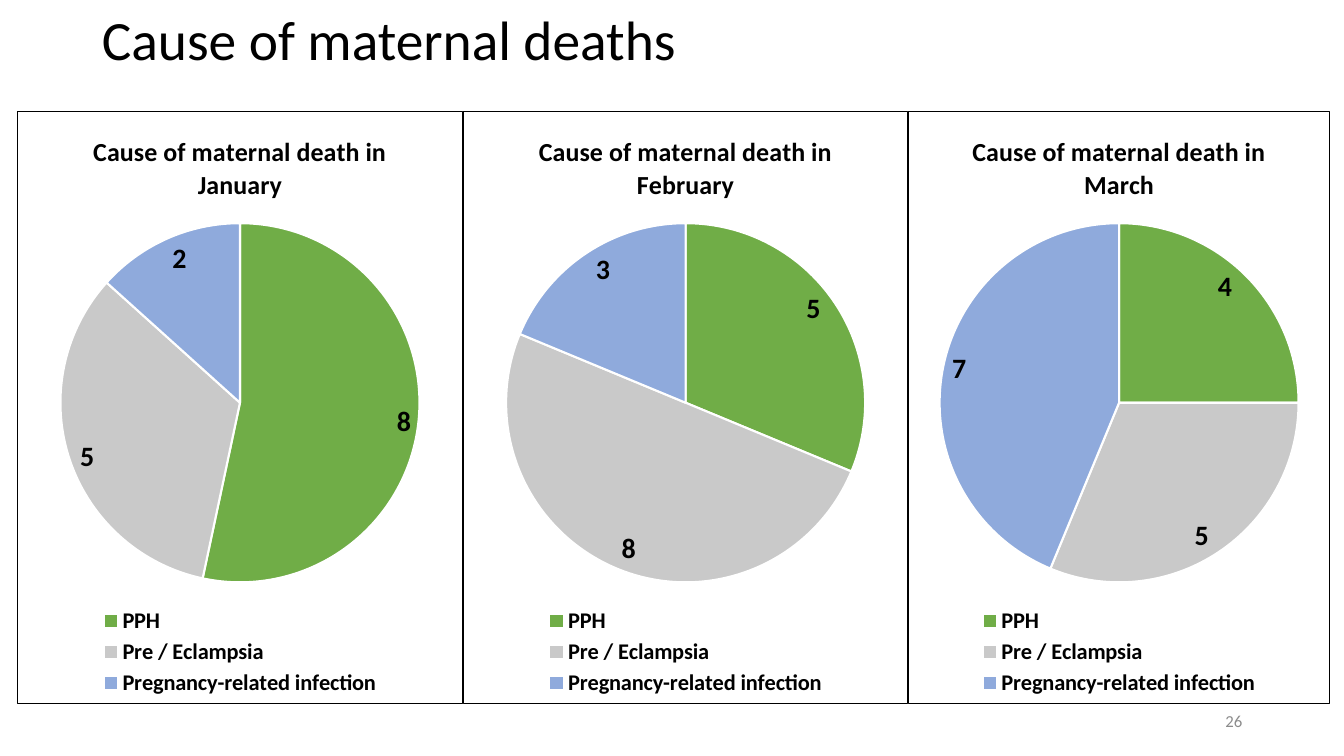
"""Builds a slide with three pie charts of the causes of maternal death by month."""
import pptx
import pptx.chart.data
import pptx.dml.color
import pptx.enum.chart
import pptx.enum.text
import pptx.oxml
import pptx.util

Inches, Pt = pptx.util.Inches, pptx.util.Pt
RGB = pptx.dml.color.RGBColor.from_string
COLORS = {"text": "000000", "number": "8C8C8C", "white": "FFFFFF",
          "PPH": "70AD47", "Pre / Eclampsia": "C9C9C9",
          "Pregnancy-related infection": "8FAADC"}
CAUSES = ["PPH", "Pre / Eclampsia", "Pregnancy-related infection"]
MONTHS = [("January", 0.17, 4.42, (8, 5, 2)),
          ("February", 4.59, 4.42, (5, 8, 3)),
          ("March", 9.01, 4.18, (4, 5, 7))]
TOP, HEIGHT = 1.1, 5.88
PIE, PIE_TOP = 3.57, 1.11
LEGEND_WIDTH, LEGEND_TOP, LEGEND_HEIGHT = 2.85, 4.9, 0.95
NS = 'xmlns:c="http://schemas.openxmlformats.org/drawingml/2006/chart"'
NS_A = 'xmlns:a="http://schemas.openxmlformats.org/drawingml/2006/main"'


def style(font, size, color="text", bold=None):
    font.name, font.size, font.bold = "Calibri", Pt(size), bold
    font.color.rgb = RGB(COLORS[color])


def layout_xml(chart_width, left, top, width, height, target=""):
    box = {"x": left / chart_width, "y": top / HEIGHT,
           "w": width / chart_width, "h": height / HEIGHT}
    values = "".join(f'<c:{k} val="{v:.3f}"/>' for k, v in box.items())
    return pptx.oxml.parse_xml(
        f'<c:layout {NS}><c:manualLayout>{target}<c:xMode val="edge"/>'
        f'<c:yMode val="edge"/>{values}</c:manualLayout></c:layout>')


prs = pptx.Presentation()
prs.slide_width, prs.slide_height = Inches(13.33), Inches(7.5)
s = prs.slides.add_slide(prs.slide_layouts[5])

title = s.shapes.title
title.left, title.top = Inches(0.91), Inches(0.1)
title.width, title.height = Inches(11.71), Inches(0.64)
tf = title.text_frame
tf.auto_size = pptx.enum.text.MSO_AUTO_SIZE.NONE
tf.vertical_anchor = pptx.enum.text.MSO_ANCHOR.MIDDLE
p = tf.paragraphs[0]
p.alignment = pptx.enum.text.PP_ALIGN.LEFT
p.line_spacing = 0.9
r = p.add_run()
r.text = "Cause of maternal deaths"
style(r.font, 39.6)

number = s.shapes.add_textbox(Inches(9.42), Inches(6.95), Inches(3), Inches(0.4))
tf = number.text_frame
tf.word_wrap = True
tf.vertical_anchor = pptx.enum.text.MSO_ANCHOR.MIDDLE
p = tf.paragraphs[0]
p.alignment = pptx.enum.text.PP_ALIGN.RIGHT
r = p.add_run()
r.text = "26"
style(r.font, 12, "number")

for month, left, width, deaths in MONTHS:
    data = pptx.chart.data.CategoryChartData()
    data.categories = CAUSES
    data.add_series("Series 1", deaths)
    chart = s.shapes.add_chart(
        pptx.enum.chart.XL_CHART_TYPE.PIE, Inches(left), Inches(TOP),
        Inches(width), Inches(HEIGHT), data).chart
    style(chart.font, 10, bold=True)

    chart.has_title = True
    r = chart.chart_title.text_frame.paragraphs[0].add_run()
    r.text = f"Cause of maternal death in {month}"
    style(r.font, 18.6, bold=True)
    chart.chart_title.include_in_layout = False

    chart.has_legend = True
    legend = chart.legend
    legend.position = pptx.enum.chart.XL_LEGEND_POSITION.BOTTOM
    legend.include_in_layout = False
    style(legend.font, 16, bold=True)

    plot = chart.plots[0]
    plot.vary_by_categories = True
    plot.has_data_labels = True
    labels = plot.data_labels
    labels.show_value = True
    labels.show_percentage = False
    labels.position = pptx.enum.chart.XL_LABEL_POSITION.BEST_FIT
    style(labels.font, 20, bold=True)
    for i, cause in enumerate(CAUSES):
        fmt = plot.series[0].points[i].format
        fmt.fill.solid()
        fmt.fill.fore_color.rgb = RGB(COLORS[cause])
        fmt.line.color.rgb = RGB(COLORS["white"])
        fmt.line.width = Pt(1.5)

    space = chart._chartSpace
    area = space.chart.plotArea
    for old in area.findall(pptx.oxml.ns.qn("c:layout")):
        area.remove(old)
    area.insert(0, layout_xml(width, (width - PIE) / 2, PIE_TOP, PIE, PIE,
                              '<c:layoutTarget val="inner"/>'))
    for old in legend._element.findall(pptx.oxml.ns.qn("c:layout")):
        legend._element.remove(old)
    legend._element.find(pptx.oxml.ns.qn("c:legendPos")).addnext(
        layout_xml(width, (width - LEGEND_WIDTH) / 2, LEGEND_TOP,
                   LEGEND_WIDTH, LEGEND_HEIGHT))
    space.chart.addnext(pptx.oxml.parse_xml(
        f'<c:spPr {NS} {NS_A}><a:noFill/><a:ln w="9525"><a:solidFill>'
        f'<a:srgbClr val="{COLORS["text"]}"/></a:solidFill></a:ln></c:spPr>'))

prs.save("out.pptx")
